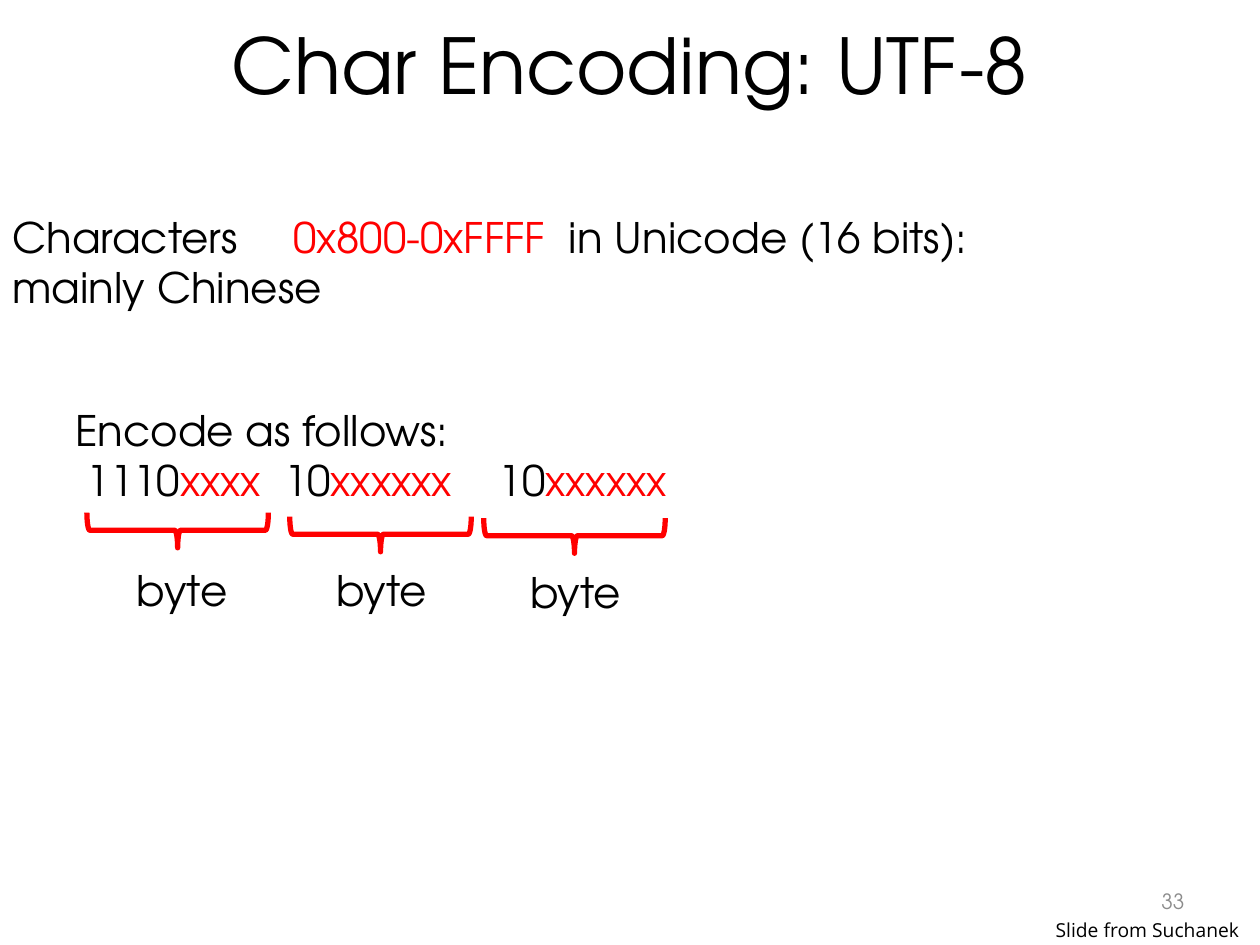
from lxml import etree
from pptx import Presentation
from pptx import util as u
from pptx.dml.color import RGBColor
from pptx.enum import shapes, text
from pptx.oxml.ns import qn

FONT = "TeX Gyre Adventor"
BLACK, RED, GREY = "000000", "FF0000", "8C8C8C"


def color(hex_string):
    return RGBColor.from_string(hex_string)


def style(paragraph, size, font=FONT, hex_color=BLACK, align=None):
    paragraph.font.size = u.Pt(size)
    paragraph.font.name = font
    paragraph.font.color.rgb = color(hex_color)
    paragraph.alignment = align


def place(shape, left, top, width, height):
    shape.left, shape.top = u.Cm(left), u.Cm(top)
    shape.width, shape.height = u.Cm(width), u.Cm(height)


def add_tab_stops(paragraph, stops):
    tab_list = etree.Element(qn("a:tabLst"))
    for stop in stops:
        etree.SubElement(tab_list, qn("a:tab"), pos=str(u.Cm(stop)), algn="l")
    # Tab stops come before the default run properties
    paragraph._p.get_or_add_pPr().insert(0, tab_list)


def add_text(slide, box, lines, size=24, wrap=True, stops=(), **options):
    """Each line is a list of (words, colour) runs; None keeps the colour."""
    shape = slide.shapes.add_textbox(*(u.Cm(length) for length in box))
    frame = shape.text_frame
    frame.word_wrap = wrap
    for index, line in enumerate(lines):
        paragraph = frame.paragraphs[0] if index == 0 else frame.add_paragraph()
        style(paragraph, size, **options)
        if stops:
            add_tab_stops(paragraph, stops)
        for words, run_color in line:
            run = paragraph.add_run()
            run.text = words
            if run_color:
                run.font.color.rgb = color(run_color)
    return frame


def add_byte(slide, center, brace_top, label_left, label_top):
    """A downward brace with its label below."""
    depth, span = 0.71, 3.66
    brace = slide.shapes.add_shape(
        shapes.MSO_SHAPE.RIGHT_BRACE, u.Cm(center - depth / 2),
        u.Cm(brace_top), u.Cm(depth), u.Cm(span))
    brace.rotation = 90
    brace.shadow.inherit = False
    brace.fill.background()
    brace.line.color.rgb = color(RED)
    brace.line.width = u.Pt(3)
    add_text(slide, (label_left, label_top, 3.23, 1.27), [[("byte", None)]])


def main():
    presentation = Presentation()
    presentation.slide_width, presentation.slide_height = u.Cm(25.4), u.Cm(19.05)
    slide = presentation.slides.add_slide(presentation.slide_layouts[5])

    # Title
    title = slide.shapes.title
    place(title, 1.27, 0, 22.86, 2.57)
    title.text_frame.text = "Char Encoding: UTF-8"
    style(title.text_frame.paragraphs[0], 44, align=text.PP_ALIGN.CENTER)

    # Character range
    add_text(slide, (0, 4.14, 24.43, 2.31), [
        [("Characters\t", None), ("0x800-0xFFFF\t", RED),
         ("in Unicode (16 bits):", None)],
        [("mainly Chinese", None)],
    ], stops=(5.66, 11.22))

    # Bit pattern
    add_text(slide, (1.27, 8.03, 15.27, 2.31), [
        [("Encode as follows:", None)],
        [(" 1110", None), ("xxxx\t", RED), ("10", None), ("xxxxxx\t", RED),
         ("10", None), ("xxxxxx", RED)],
    ], stops=(4.21, 8.54))

    # Bytes
    for byte in ((3.58, 8.86, 2.51, 11.25),
                 (7.67, 8.94, 6.53, 11.25),
                 (11.58, 8.97, 10.44, 11.3)):
        add_byte(slide, *byte)

    # Slide number and source
    number = add_text(slide, (18.21, 17.65, 5.92, 1.02), [[("33", None)]], 12,
                      hex_color=GREY, align=text.PP_ALIGN.RIGHT)
    number.vertical_anchor = text.MSO_ANCHOR.MIDDLE
    add_text(slide, (21.03, 18.39, 4.37, 0.74), [[("Slide from Suchanek", None)]],
             11, wrap=False, font="Open Sans")

    presentation.save("out.pptx")


if __name__ == "__main__":
    main()
